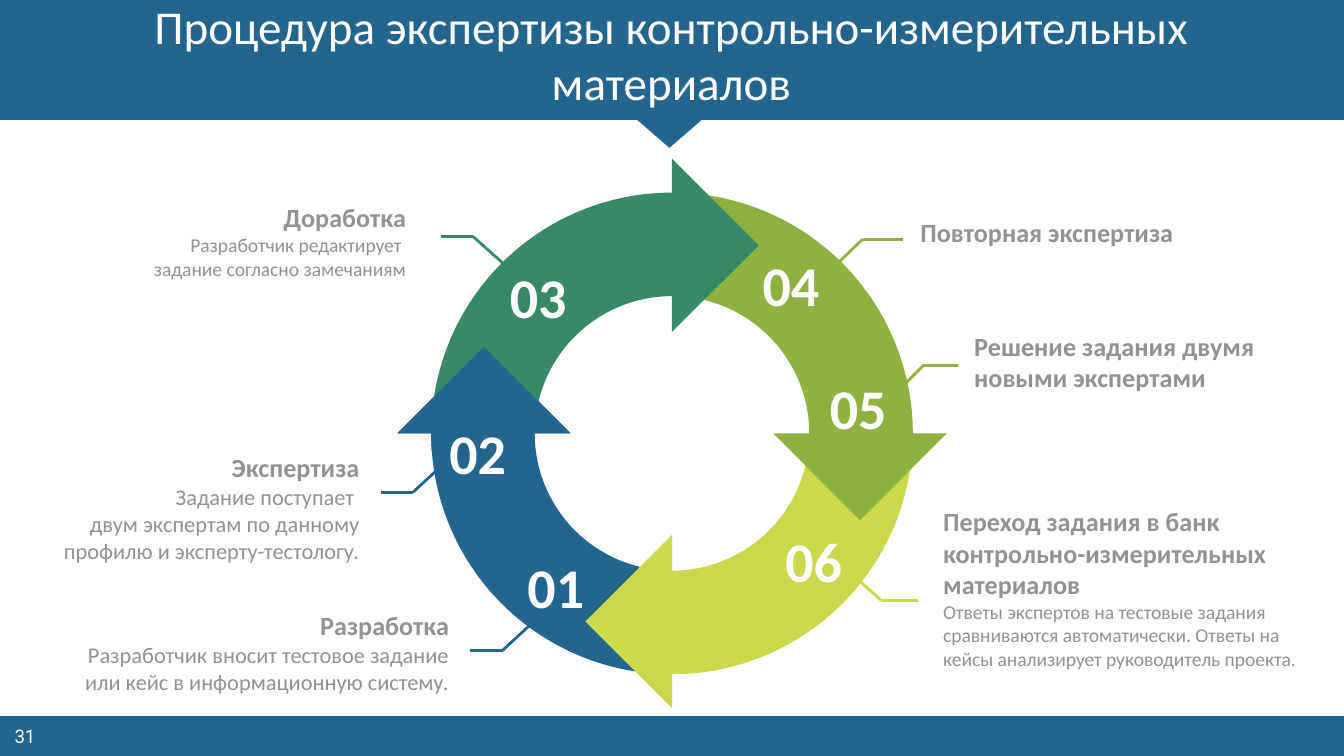
import dataclasses
import math

import pptx
import pptx.dml.color
import pptx.enum.shapes
import pptx.enum.text
import pptx.oxml.ns
import pptx.util
from lxml import etree

Pt = pptx.util.Pt
qn = pptx.oxml.ns.qn
SHAPE = pptx.enum.shapes.MSO_SHAPE
ALIGN = pptx.enum.text.PP_ALIGN
ANCHOR = pptx.enum.text.MSO_ANCHOR


@dataclasses.dataclass(frozen=True)
class Theme:
    blue: str = "24658D"
    green: str = "388968"
    olive: str = "8FB140"
    lime: str = "CAD849"
    grey: str = "929292"
    white: str = "FFFFFF"
    font: str = "Calibri"
    page_font: str = "Roboto"
    title: float = 25.2
    number: float = 30
    heading: float = 14
    body: float = 12
    small: float = 10.5
    page: float = 10
    leader: float = 1.5


THEME = Theme()


@dataclasses.dataclass(frozen=True)
class Callout:
    """Leader: gap from the text, drop from its top, flat run, then a slope to the ring."""
    box: tuple
    heading: str
    body: tuple
    body_size: float
    color: str
    gap: float
    drop: float
    run: float
    slope: tuple
    on_left: bool


CALLOUTS = [
    Callout((31.7, 323, 216, 53.3), "Разработка",
            ("Разработчик вносит тестовое задание или кейс в информационную систему.",),
            THEME.body, THEME.blue, 4.3, 25.4, 17.3, (18.7, -17.3), True),
    Callout((17.5, 238.5, 182.2, 67.7), "Экспертиза",
            ("Задание поступает ", "двум экспертам по данному профилю и эксперту-тестологу."),
            THEME.body, THEME.blue, 4.3, 25.2, 17.3, (18.7, -17.3), True),
    Callout((48.2, 104.6, 176.4, 49.7), "Доработка",
            ("Разработчик редактирует ", "задание согласно замечаниям"),
            THEME.small, THEME.green, 11.5, 22.1, 17.3, (19.4, 17.3), True),
    Callout((486, 112.3, 204.5, 24.5), "Повторная экспертиза", (),
            THEME.small, THEME.olive, 2.2, 15.8, 21.6, (18.7, 18), False),
    Callout((514.8, 173.5, 181.4, 41), "Решение задания двумя новыми экспертами", (),
            THEME.small, THEME.olive, 1.4, 22.3, 18.7, (17.3, 17.3), False),
    Callout((498.2, 267.3, 204.5, 108.7),
            "Переход задания в банк контрольно-измерительных материалов",
            ("Ответы экспертов на тестовые задания сравниваются автоматически. "
             "Ответы на кейсы анализирует руководитель проекта.",),
            THEME.small, THEME.lime, 6.5, 54.5, 19.4, (19.4, -17.3), False),
]

# Offsets of the number centres from the ring centre
NUMBERS = {"01": (-61.8, 82.4), "02": (-103.6, 10.2), "03": (-71.2, -73.3),
           "04": (64.2, -79.8), "05": (100.2, -13.6), "06": (76.4, 68.5)}


def rgb(color):
    return pptx.dml.color.RGBColor.from_string(color)


def paint(shape, color):
    shape.shadow.inherit = False
    shape.fill.solid()
    shape.fill.fore_color.rgb = rgb(color)
    shape.line.fill.background()


def add_block(slide, kind, box, color):
    block = slide.shapes.add_shape(kind, *map(Pt, box))
    paint(block, color)
    return block


def add_frame(slide, box, *, inset=None, anchor=ANCHOR.TOP, wrap=True):
    frame = slide.shapes.add_textbox(*map(Pt, box)).text_frame
    frame.word_wrap = wrap
    frame.vertical_anchor = anchor
    if inset is not None:
        frame.margin_left = frame.margin_right = Pt(inset)
        frame.margin_top = frame.margin_bottom = Pt(inset)
    return frame


def write(frame, text, *, size, color=THEME.white, bold=False,
          font=THEME.font, align=ALIGN.CENTER):
    """Add one paragraph, using the empty first one if it is still free."""
    paragraph = frame.paragraphs[0] if not frame.text else frame.add_paragraph()
    paragraph.alignment = align
    run = paragraph.add_run()
    run.text = text
    run.font.size = Pt(size)
    run.font.bold = bold
    run.font.name = font
    run.font.color.rgb = rgb(color)


def add_leader(slide, points, color):
    for start, end in zip(points, points[1:]):
        line = slide.shapes.add_connector(
            pptx.enum.shapes.MSO_CONNECTOR.STRAIGHT, *map(Pt, start + end))
        line.line.color.rgb = rgb(color)
        line.line.width = Pt(THEME.leader)
        etree.SubElement(line._element.spPr, qn("a:effectLst"))


def add_header(slide, box, title):
    x, y, w, h = box
    add_block(slide, SHAPE.RECTANGLE, box, THEME.blue)
    pointer = add_block(slide, SHAPE.ISOSCELES_TRIANGLE,
                        (x + 340.6, y + h - 0.7, 36, 15.6), THEME.blue)
    pointer.rotation = 180
    frame = add_frame(slide, (x + 31, y - 1.6, w - 62.6, h + 0.6), inset=0)
    write(frame, title, size=THEME.title)


def add_footer(slide, box, page):
    x, y, w, h = box
    add_block(slide, SHAPE.RECTANGLE, box, THEME.blue)
    frame = add_frame(slide, (x + 1.4, y + 4.6, 24, 12.4), inset=0, anchor=ANCHOR.MIDDLE)
    write(frame, page, size=THEME.page, font=THEME.page_font)


def bend(shape, curve_starts):
    """Turn each three line segments from the given indexes into one Bezier curve."""
    segments = list(shape._element.iter(qn("a:lnTo")))
    for first in curve_starts:
        curve = etree.Element(qn("a:cubicBezTo"))
        segments[first].addprevious(curve)
        for segment in segments[first:first + 3]:
            curve.append(segment[0])
            segment.getparent().remove(segment)


def add_ring_arrow(slide, box, end, color, sweep=90, pieces=2):
    """Clockwise arrow in the ring's square box; its arc ends at `end` degrees, before the head."""
    x, y, side, _ = box
    outer = side / 2
    inner, middle, head = 0.57 * outer, 0.781 * outer, 0.36 * outer

    def point(radius, degrees, ahead=0):
        angle = math.radians(degrees)
        return (Pt(x + outer + radius * math.cos(angle) - ahead * math.sin(angle)),
                Pt(y + outer + radius * math.sin(angle) + ahead * math.cos(angle)))

    def arc(radius, start, turn):
        step = turn / pieces
        handle = radius * 4 / 3 * math.tan(math.radians(step) / 4)
        points = []
        for i in range(pieces):
            a, b = start + i * step, start + (i + 1) * step
            points += [point(radius, a, handle), point(radius, b, -handle), point(radius, b)]
        return points

    outline = arc(outer, end - sweep, sweep)
    outline += [point(middle + head, end), point(middle, end, head),
                point(middle - head, end), point(inner, end)]
    inner_start = len(outline)
    outline += arc(inner, end, -sweep)
    builder = slide.shapes.build_freeform(*point(outer, end - sweep))
    builder.add_line_segments(outline, close=True)
    arrow = builder.convert_to_shape()
    bend(arrow, [start + 3 * i for start in (0, inner_start) for i in range(pieces)])
    paint(arrow, color)


def add_ring(slide, box):
    x, y, side, _ = box
    for end, color in ((180, THEME.blue), (90, THEME.lime),
                       (0, THEME.olive), (270, THEME.green)):
        add_ring_arrow(slide, box, end, color)
    # The blue head lies over the green tail, closing the cycle
    add_ring_arrow(slide, box, 180, THEME.blue, sweep=4.2, pieces=1)


def add_numbers(slide, box):
    x, y, side, _ = box
    w, h = 45.4, 43.9
    for number, (dx, dy) in NUMBERS.items():
        frame = add_frame(slide, (x + side / 2 + dx - w / 2, y + side / 2 + dy - h / 2, w, h),
                          wrap=False)
        write(frame, number, size=THEME.number, bold=True, align=ALIGN.LEFT)


def add_callout(slide, callout):
    x, y, w, _ = callout.box
    align = ALIGN.RIGHT if callout.on_left else ALIGN.LEFT
    edge, toward = (x + w, 1) if callout.on_left else (x, -1)
    start = (edge + toward * callout.gap, y + callout.drop)
    knee = (start[0] + toward * callout.run, start[1])
    across, down = callout.slope
    add_leader(slide, [(knee[0] + toward * across, knee[1] + down), knee, start], callout.color)

    frame = add_frame(slide, callout.box)
    write(frame, callout.heading, size=THEME.heading, color=THEME.grey, bold=True, align=align)
    for text in callout.body:
        write(frame, text, size=callout.body_size, color=THEME.grey, align=align)


def main():
    deck = pptx.Presentation()
    deck.slide_width, deck.slide_height = Pt(720), Pt(405)
    slide = deck.slides.add_slide(deck.slide_layouts[6])
    add_footer(slide, (0, 383.6, 720, 21.4), "31")
    add_header(slide, (0, 0, 720, 64.3), "Процедура экспертизы контрольно-измерительных материалов")
    ring = (231, 103.2, 258, 258)
    add_ring(slide, ring)
    for callout in CALLOUTS:
        add_callout(slide, callout)
    add_numbers(slide, ring)
    deck.save("out.pptx")


if __name__ == "__main__":
    main()
